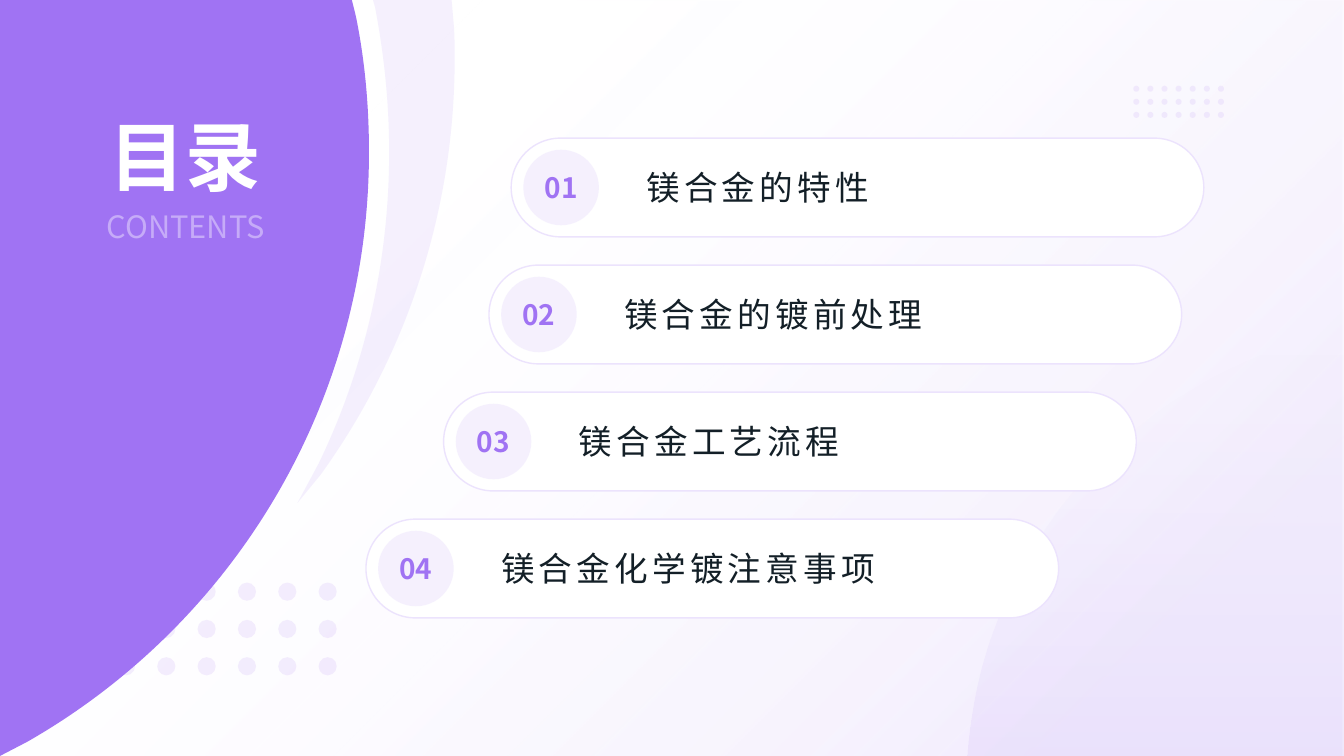
import pptx
import pptx.dml.color
import pptx.enum.shapes
import pptx.enum.text
import pptx.oxml
import pptx.oxml.ns
import pptx.util

Inches = pptx.util.Inches
SHAPE = pptx.enum.shapes.MSO_SHAPE
ALIGN = pptx.enum.text.PP_ALIGN
ANCHOR = pptx.enum.text.MSO_ANCHOR
FONT = "Noto Sans CJK SC"
NS = pptx.oxml.ns.nsdecls("a")
qn = pptx.oxml.ns.qn

WIDTH, HEIGHT = 13.33, 7.5
PURPLE, LILAC, PALE = "A073F3", "DBC6FA", "ECE3FD"
WHITE, INK, SUBTITLE = "FFFFFF", "131F27", "C6ABF8"

ITEMS = [
    ("镁合金的特性", 5.07),
    ("镁合金的镀前处理", 4.85),
    ("镁合金工艺流程", 4.4),
    ("镁合金化学镀注意事项", 3.63),
]
FIRST_TOP, PITCH = 1.37, 1.26
PILL_W, PILL_H, BADGE, LABEL_W, LABEL_H = 6.87, 0.98, 0.75, 5.05, 0.65

CORNER = [(9.6, 7.5), (13.33, 7.5), (13.33, 3.28), (13.28, 3.29),
          (11.32, 3.69, 9.81, 5.33, 9.61, 7.35)]
PANEL = [(0, 0), (3.49, 0), (3.53, 0.16), (3.62, 0.6, 3.66, 1.05, 3.66, 1.51),
         (3.66, 4.02, 2.3, 6.2, 0.27, 7.36), (0, 7.5)]
CRESCENT = [(3.7, 0), (4.48, 0), (4.5, 0.23), (4.51, 0.35, 4.51, 0.47, 4.51, 0.58),
            (4.51, 2.13, 4.01, 3.56, 3.18, 4.71), (2.95, 4.99), (3.16, 4.6),
            (3.61, 3.67, 3.86, 2.62, 3.86, 1.51),
            (3.86, 1.02, 3.81, 0.54, 3.72, 0.07)]


def rgb(color):
    return pptx.dml.color.RGBColor.from_string(color)


def paint(sp, color, alpha=100, line=None):
    sp.shadow.inherit = False
    sp.fill.solid()
    sp.fill.fore_color.rgb = rgb(color)
    if alpha < 100:
        clr = sp._element.spPr.find(qn("a:solidFill"))[0]
        clr.append(pptx.oxml.parse_xml(f'<a:alpha {NS} val="{alpha * 1000}"/>'))
    if line:
        sp.line.color.rgb = rgb(line)
        sp.line.width = pptx.util.Pt(1)
    else:
        sp.line.fill.background()


def paint_gradient(sp, stops, angle):
    paint(sp, WHITE)
    gs = "".join(
        f'<a:gs pos="{pos * 1000}"><a:srgbClr val="{color}">'
        f'<a:alpha val="{alpha * 1000}"/></a:srgbClr></a:gs>'
        for pos, color, alpha in stops)
    solid = sp._element.spPr.find(qn("a:solidFill"))
    solid.getparent().replace(solid, pptx.oxml.parse_xml(
        f'<a:gradFill {NS} rotWithShape="1"><a:gsLst>{gs}</a:gsLst>'
        f'<a:lin ang="{angle * 60000}" scaled="0"/></a:gradFill>'))


def add_outline(box, contours):
    left, top, width, height = map(Inches, box)
    builder = s.shapes.build_freeform(left, top)
    builder.add_line_segments([(left + width, top), (left + width, top + height),
                               (left, top + height)])
    sp = builder.convert_to_shape()

    def points(step):
        return "".join(f'<a:pt x="{Inches(x) - left}" y="{Inches(y) - top}"/>'
                       for x, y in zip(step[::2], step[1::2]))

    xml = ""
    for start, *steps in contours:
        xml += f"<a:moveTo>{points(start)}</a:moveTo>"
        for step in steps:
            if len(step) == 3:
                radius, angle, sweep = step
                xml += (f'<a:arcTo wR="{Inches(radius)}" hR="{Inches(radius)}" '
                        f'stAng="{angle * 60000}" swAng="{sweep * 60000}"/>')
            else:
                tag = "lnTo" if len(step) == 2 else "cubicBezTo"
                xml += f"<a:{tag}>{points(step)}</a:{tag}>"
        xml += "<a:close/>"
    path_list = sp._element.spPr.find(".//" + qn("a:pathLst"))
    path_list.replace(path_list[0], pptx.oxml.parse_xml(
        f'<a:path {NS} w="{width}" h="{height}">{xml}</a:path>'))
    return sp


def add_dots(left, top, dx, dy, radius, cols=7, rows=3):
    dots = [[(left + dx * col, top + radius + dy * row),
             (radius, 180, 180), (radius, 0, 180)]
            for row in range(rows) for col in range(cols)]
    box = (left, top, dx * (cols - 1) + 2 * radius, dy * (rows - 1) + 2 * radius)
    paint(add_outline(box, dots), LILAC, 30)


def add_shape(kind, *box):
    return s.shapes.add_shape(kind, *map(Inches, box))


def write(sp, text, size, color, bold=False, align=ALIGN.CENTER,
          anchor=ANCHOR.MIDDLE, wrap=True, spacing=0):
    tf = sp.text_frame
    tf.text = text
    tf.word_wrap = wrap
    tf.vertical_anchor = anchor
    tf.margin_left = tf.margin_right = tf.margin_top = tf.margin_bottom = 0
    p = tf.paragraphs[0]
    p.alignment = align
    r = p.runs[0]
    r.font.size = pptx.util.Pt(size)
    r.font.bold = bold
    r.font.name = FONT
    r.font.color.rgb = rgb(color)
    rPr = r._r.get_or_add_rPr()
    rPr.find(qn("a:latin")).addnext(
        pptx.oxml.parse_xml(f'<a:ea {NS} typeface="{FONT}"/>'))
    if spacing:
        rPr.set("spc", str(spacing * 100))


def add_text(box, *args, **kwargs):
    write(s.shapes.add_textbox(*map(Inches, box)), *args, **kwargs)


prs = pptx.Presentation()
prs.slide_width, prs.slide_height = Inches(WIDTH), Inches(HEIGHT)
s = prs.slides.add_slide(prs.slide_layouts[6])

backdrop = add_shape(SHAPE.RECTANGLE, 0, 0, WIDTH, HEIGHT)
paint_gradient(backdrop, [(22, WHITE, 0), (85, PURPLE, 12)], 45)
add_dots(0.76, 5.78, 0.4, 0.37, 0.09)
corner = add_outline((9.6, 3.28, 3.73, 4.22), [CORNER])
paint_gradient(corner, [(0, PURPLE, 10), (100, LILAC, 0)], 270)
add_dots(11.24, 0.85, 0.14, 0.13, 0.03)
paint(add_outline((0, 0, 3.66, 7.5), [PANEL]), PURPLE)
paint(add_outline((2.95, 0, 1.56, 4.99), [CRESCENT]), PURPLE, 10)

add_text((0.52, 0.81, 2.64, 1.18), "目录", 54, WHITE, bold=True, anchor=ANCHOR.BOTTOM)
add_text((0.52, 2.02, 2.64, 0.45), "CONTENTS", 22, SUBTITLE)

for i, (label, left) in enumerate(ITEMS):
    top = FIRST_TOP + PITCH * i
    pill = add_shape(SHAPE.ROUNDED_RECTANGLE, left, top, PILL_W, PILL_H)
    pill.adjustments[0] = 0.5
    paint(pill, WHITE, line=PALE)
    badge = add_shape(SHAPE.OVAL, left + 0.12, top + (PILL_H - BADGE) / 2, BADGE, BADGE)
    paint(badge, PALE, 50)
    write(badge, f"{i + 1:02d}", 20, PURPLE, bold=True, wrap=False)
    add_text((left + 1.34, top + (PILL_H - LABEL_H) / 2, LABEL_W, LABEL_H),
             label, 24, INK, align=ALIGN.LEFT, spacing=3)

prs.save("out.pptx")
